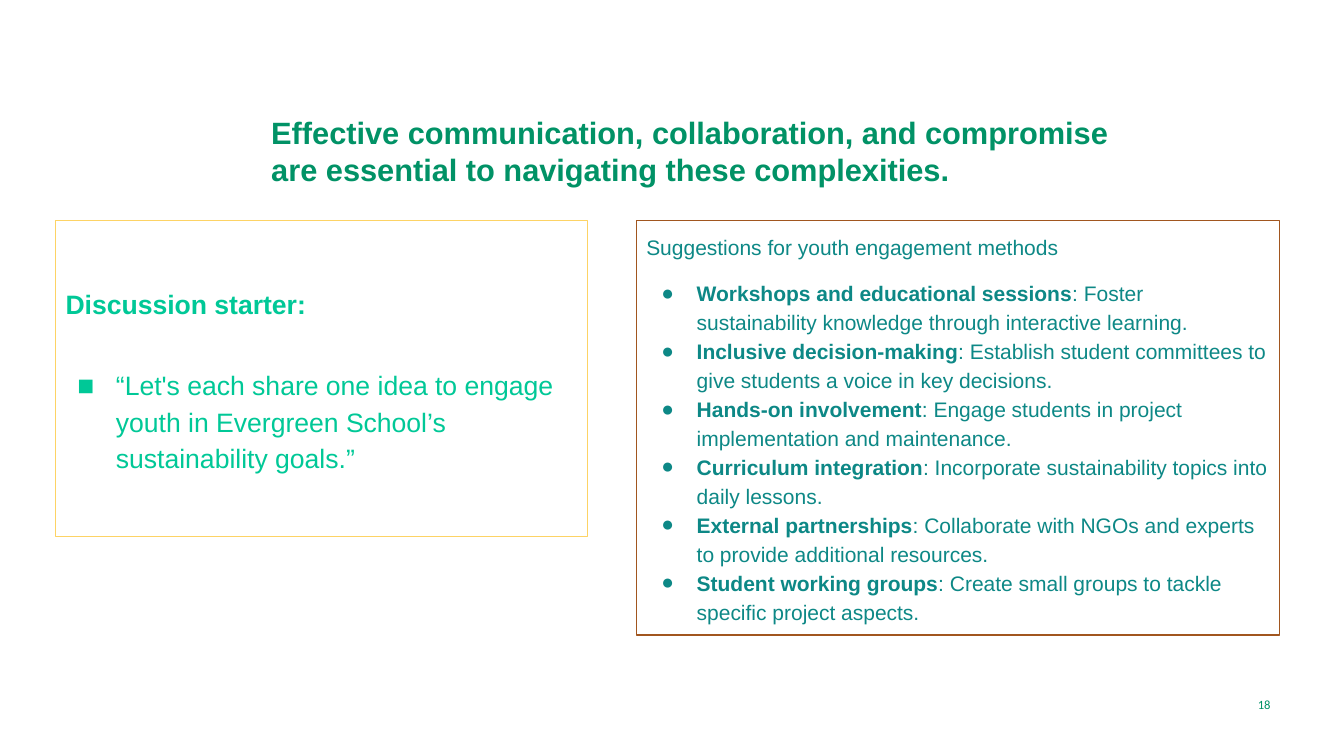
import pptx
import pptx.dml.color
import pptx.enum.text
import pptx.oxml
import pptx.oxml.ns
import pptx.util
from dataclasses import dataclass

TITLE = "Effective communication, collaboration, and compromise are essential to navigating these complexities."
DISCUSSION_HEADING = "Discussion starter:"
DISCUSSION_QUOTE = "“Let's each share one idea to engage youth in Evergreen School’s sustainability goals.”"
METHODS_HEADING = "Suggestions for youth engagement methods"
METHODS = [
    ("Workshops and educational sessions", "Foster sustainability knowledge through interactive learning."),
    ("Inclusive decision-making", "Establish student committees to give students a voice in key decisions."),
    ("Hands-on involvement", "Engage students in project implementation and maintenance."),
    ("Curriculum integration", "Incorporate sustainability topics into daily lessons."),
    ("External partnerships", "Collaborate with NGOs and experts to provide additional resources."),
    ("Student working groups", "Create small groups to tackle specific project aspects."),
]
PAGE_NUMBER = "18"

EMU_PER_PX = 9144
SLIDE_SIZE = (1333, 750)
TITLE_BOX = (259, 103, 895, 94)
DISCUSSION_BOX = (55, 219, 528, 313)
METHODS_BOX = (631, 219, 638, 411)
NUMBER_BOX = (1155, 679, 115, 40)
TEXT_INDENT = 50
SIDE_INSET = 10


@dataclass(frozen=True)
class Theme:
    font: str = "Arial"
    number_font: str = "Calibri"
    title: str = "019266"
    discussion: str = "00C897"
    methods: str = "0D8886"
    discussion_border: str = "FDD365"
    methods_border: str = "A1561F"
    title_size: int = 22
    discussion_size: int = 19
    methods_size: int = 15
    number_size: int = 9
    border_width: float = 0.75
    line_spacing: float = 1.15


THEME = Theme()
ANCHOR = pptx.enum.text.MSO_ANCHOR


def px(length):
    return pptx.util.Emu(length * EMU_PER_PX)


def rgb(color):
    return pptx.dml.color.RGBColor.from_string(color)


def prepare_box(shape, box, anchor, vertical_inset, border=None):
    shape.left, shape.top, shape.width, shape.height = map(px, box)
    frame = shape.text_frame
    frame.word_wrap = True
    frame.auto_size = pptx.enum.text.MSO_AUTO_SIZE.NONE
    frame.vertical_anchor = anchor
    frame.margin_left = frame.margin_right = px(SIDE_INSET)
    frame.margin_top = frame.margin_bottom = px(vertical_inset)
    if border:
        shape.line.color.rgb = rgb(border)
        shape.line.width = pptx.util.Pt(THEME.border_width)
    return frame


def add_bullet(paragraph, character, color, hanging):
    properties = paragraph._p.get_or_add_pPr()
    properties.set("marL", str(px(TEXT_INDENT if character else 0)))
    properties.set("indent", str(-px(hanging)))
    namespace = pptx.oxml.ns.nsdecls("a")
    if character:
        elements = [
            f'<a:buClr {namespace}><a:srgbClr val="{color}"/></a:buClr>',
            f'<a:buFont {namespace} typeface="{THEME.font}"/>',
            f'<a:buChar {namespace} char="{character}"/>',
        ]
    else:
        elements = [f"<a:buNone {namespace}/>"]
    for element in elements:
        properties.append(pptx.oxml.parse_xml(element))


def write_paragraph(frame, runs, color, size, font=THEME.font, spacing=1.0,
                    before=0, bullet=None, hanging=0,
                    alignment=pptx.enum.text.PP_ALIGN.LEFT):
    paragraph = frame.paragraphs[0] if not frame.text else frame.add_paragraph()
    add_bullet(paragraph, bullet, color, hanging)
    paragraph.alignment = alignment
    paragraph.line_spacing = spacing
    paragraph.space_before = pptx.util.Pt(before)
    paragraph.space_after = pptx.util.Pt(0)
    for text, bold in runs:
        run = paragraph.add_run()
        run.text = text
        run.font.name = font
        run.font.size = pptx.util.Pt(size)
        run.font.bold = bold
        run.font.color.rgb = rgb(color)


def main():
    presentation = pptx.Presentation()
    presentation.slide_width, presentation.slide_height = map(px, SLIDE_SIZE)
    two_content = presentation.slide_layouts[3]
    slide = presentation.slides.add_slide(two_content)
    title, discussion, methods = slide.placeholders

    frame = prepare_box(title, TITLE_BOX, ANCHOR.TOP, 10)
    write_paragraph(frame, [(TITLE, True)], THEME.title, THEME.title_size)

    frame = prepare_box(discussion, DISCUSSION_BOX, ANCHOR.MIDDLE, 5, THEME.discussion_border)
    style = dict(color=THEME.discussion, size=THEME.discussion_size, spacing=THEME.line_spacing)
    write_paragraph(frame, [(DISCUSSION_HEADING, True)], **style)
    write_paragraph(frame, [(DISCUSSION_QUOTE, False)], before=32, bullet="◼", hanging=38, **style)

    frame = prepare_box(methods, METHODS_BOX, ANCHOR.TOP, 10, THEME.methods_border)
    style = dict(color=THEME.methods, size=THEME.methods_size, spacing=THEME.line_spacing)
    write_paragraph(frame, [(METHODS_HEADING, False)], **style)
    for index, (method, detail) in enumerate(METHODS):
        write_paragraph(frame, [(method, True), (f": {detail}", False)],
                        before=0 if index else 12, bullet="●", hanging=35, **style)

    number = slide.shapes.add_textbox(*map(px, NUMBER_BOX))
    frame = prepare_box(number, NUMBER_BOX, ANCHOR.MIDDLE, 5)
    write_paragraph(frame, [(PAGE_NUMBER, False)], THEME.title, THEME.number_size,
                    font=THEME.number_font, alignment=pptx.enum.text.PP_ALIGN.RIGHT)

    presentation.save("out.pptx")


if __name__ == "__main__":
    main()
